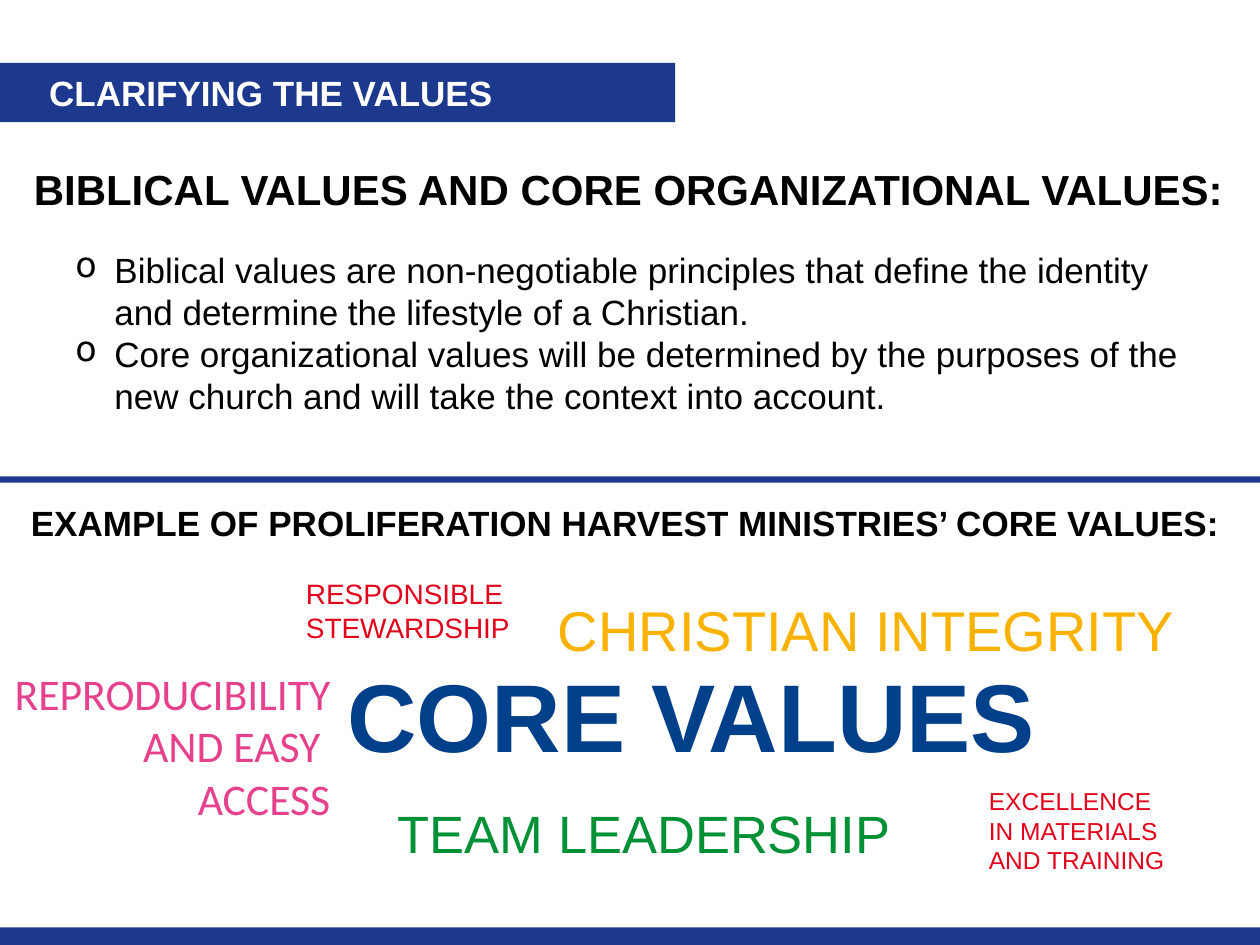
from lxml import etree
from pptx import Presentation
from pptx.dml.color import RGBColor
from pptx.enum.shapes import MSO_SHAPE
from pptx.enum.text import MSO_ANCHOR, MSO_AUTO_SIZE, PP_ALIGN
from pptx.oxml.ns import qn
from pptx.util import Inches, Pt

BLUE = "1D398D"
RED = "E2001A"

deck = Presentation()
deck.slide_width, deck.slide_height = Inches(10), Inches(7.5)
slide = deck.slides.add_slide(deck.slide_layouts[6])


def add_bar(left, top, width, height):
    bar = slide.shapes.add_shape(
        MSO_SHAPE.RECTANGLE, Inches(left), Inches(top), Inches(width), Inches(height))
    bar.shadow.inherit = False
    bar.fill.solid()
    bar.fill.fore_color.rgb = RGBColor.from_string(BLUE)
    bar.line.fill.background()
    return bar


def write(shape, *lines, size, color="000000", bold=False, font="Arial",
          align=PP_ALIGN.LEFT, bullet=None):
    """Fill a shape with one paragraph per line; a bullet adds a hanging indent."""
    frame = shape.text_frame
    frame.word_wrap = True
    frame.text = "\n".join(lines)
    for paragraph in frame.paragraphs:
        paragraph.alignment = align
        run_font = paragraph.runs[0].font
        run_font.name, run_font.size, run_font.bold = font, Pt(size), bold
        run_font.color.rgb = RGBColor.from_string(color)
        if bullet:
            properties = paragraph._p.get_or_add_pPr()
            properties.set("marL", str(Inches(0.31)))
            properties.set("indent", str(-Inches(0.31)))
            etree.SubElement(properties, qn("a:buChar")).set("char", bullet)


header = add_bar(0, 0.5, 5.36, 0.47)
write(header, "CLARIFYING THE VALUES", size=20, color="FFFFFF", bold=True)
header.text_frame.vertical_anchor = MSO_ANCHOR.MIDDLE
header.text_frame.margin_left = Inches(0.39)
header.text_frame.margin_top = header.text_frame.margin_bottom = 0

texts = [
    ((0.5, 1.92, 9.17, 1.45),
     ["Biblical values are non-negotiable principles that define the identity "
      "and determine the lifestyle of a Christian.",
      "Core organizational values will be determined by the purposes of the "
      "new church and will take the context into account."],
     dict(size=20, bullet="o")),
    ((0.17, 1.25, 9.83, 0.5), ["BIBLICAL VALUES AND CORE ORGANIZATIONAL VALUES:"],
     dict(size=24, bold=True)),
    ((0, 3.93, 10, 0.44), ["EXAMPLE OF PROLIFERATION HARVEST MINISTRIES’ CORE VALUES: "],
     dict(size=20, bold=True, align=PP_ALIGN.CENTER)),
    ((2.66, 5.16, 6, 1.03), ["CORE VALUES"], dict(size=55, color="003F8A", bold=True)),
    ((4.33, 4.68, 6.17, 0.64), ["CHRISTIAN INTEGRITY"], dict(size=32, color="F9B200")),
    ((3.06, 6.31, 4.25, 0.61), ["TEAM LEADERSHIP"], dict(size=30, color="009036")),
    ((7.75, 6.19, 2.08, 0.81), ["EXCELLENCE", "IN MATERIALS", "AND TRAINING"],
     dict(size=14, color=RED)),
    ((-0.2, 5.24, 2.92, 1.36), ["REPRODUCIBILITY", "AND EASY ", "ACCESS"],
     dict(size=25, color="E6418D", font="Calibri", align=PP_ALIGN.RIGHT)),
    ((2.33, 4.53, 2.58, 0.64), ["RESPONSIBLE STEWARDSHIP"], dict(size=16, color=RED)),
]
for place, lines, style in texts:
    box = slide.shapes.add_textbox(*map(Inches, place))
    write(box, *lines, **style)
    box.text_frame.auto_size = MSO_AUTO_SIZE.SHAPE_TO_FIT_TEXT

add_bar(0, 7.36, 10, 0.16)
add_bar(0, 3.78, 10, 0.05)

deck.save("out.pptx")
